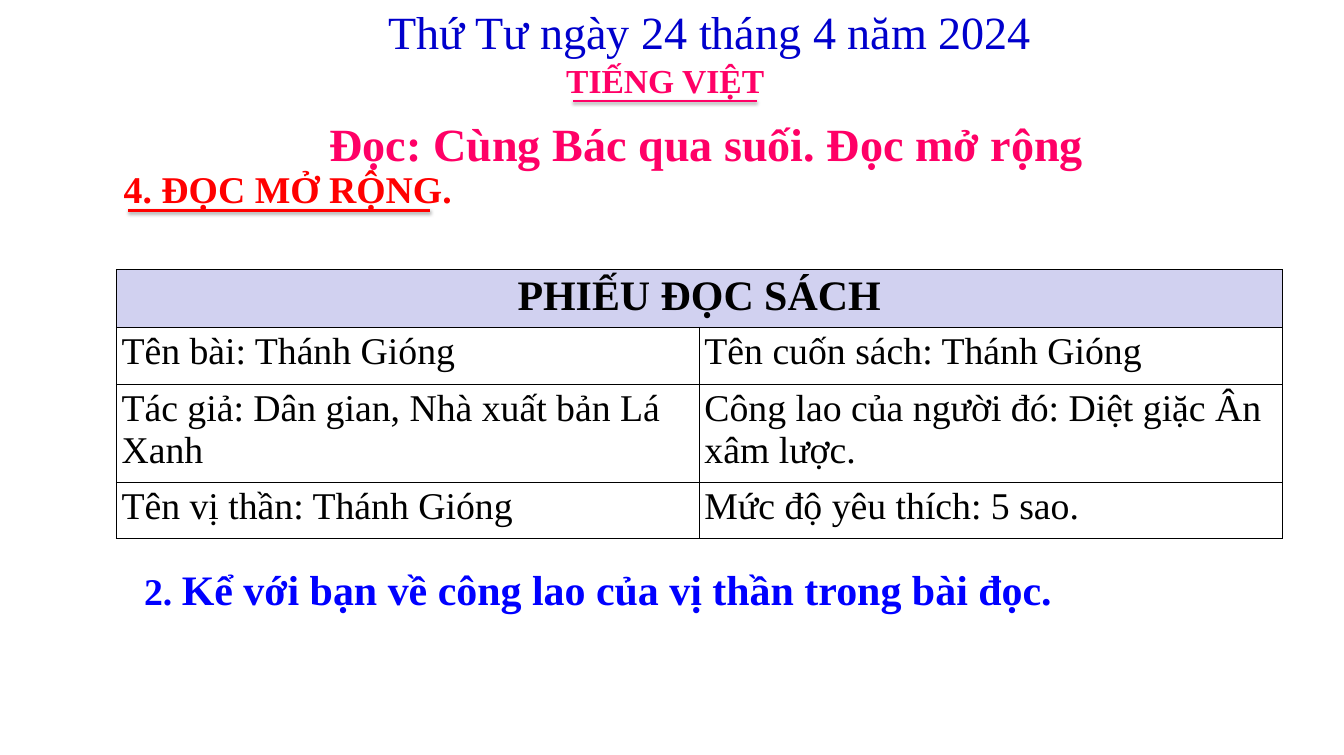
from lxml import etree
from pptx import Presentation
from pptx.dml.color import RGBColor
from pptx.enum.shapes import MSO_CONNECTOR
from pptx.enum.text import MSO_ANCHOR, MSO_AUTO_SIZE, PP_ALIGN
from pptx.oxml.ns import qn
from pptx.util import Pt

LINE = MSO_CONNECTOR.STRAIGHT
LEFT, CENTER, JUSTIFY = PP_ALIGN.LEFT, PP_ALIGN.CENTER, PP_ALIGN.JUSTIFY
TOP, FIT_SHAPE = MSO_ANCHOR.TOP, MSO_AUTO_SIZE.SHAPE_TO_FIT_TEXT

PX = 9144  # 100 px to the inch
SLIDE = (1780, 1000)
THEME = {
    "font": "Times New Roman",
    "date": "0000CC", "pink": "FF0066", "red": "FF0000", "blue": "0000FF",
    "ink": "000000", "header_fill": "D1D1F0",
    "heading": 44, "large": 40, "body": 36, "subject": 32,
}

# Content: runs are (text, size, colour, bold)
DATE = [("Thứ Tư ngày 24 tháng 4 năm 2024", "heading", "date", False)]
SUBJECT = [("TIẾNG VIỆT", "subject", "pink", True)]
LESSON = [("Đọc: Cùng Bác qua suối. Đọc mở rộng", "heading", "pink", True)]
SECTION = [("4. ĐỌC MỞ RỘNG.", "body", "red", True)]
TASK = [("2. ", "body", "blue", True),
        ("Kể với bạn về công lao của vị thần trong bài đọc.", "large", "blue", True)]
CARD_TITLE = [("PHIẾU ĐỌC SÁCH", "large", "ink", True)]
CARD_ROWS = [
    ("Tên bài: Thánh Gióng", "Tên cuốn sách: Thánh Gióng"),
    ("Tác giả: Dân gian, Nhà xuất bản Lá Xanh",
     "Công lao của người đó: Diệt giặc Ân xâm lược."),
    ("Tên vị thần: Thánh Gióng", "Mức độ yêu thích: 5 sao."),
]
CARD_BOX = (154, 357, 1544, 356)
ROW_HEIGHTS = (76, 75, 130, 75)


def px(*values):
    return [v * PX for v in values]


def color(key):
    return RGBColor.from_string(THEME[key])


def write(tf, runs, align=LEFT):
    p = tf.paragraphs[0]
    p.alignment = align
    for text, size, ink, bold in runs:
        r = p.add_run()
        r.text = text
        r.font.name = THEME["font"]
        r.font.size = Pt(THEME[size])
        r.font.bold = bold
        r.font.color.rgb = color(ink)


def add_text(shapes, box, runs, align=LEFT, wrap=True):
    tf = shapes.add_textbox(*px(*box)).text_frame
    tf.word_wrap = wrap
    tf.auto_size = FIT_SHAPE
    write(tf, runs, align)


def add_underline(shapes, x1, x2, y, ink, width, alpha, distance):
    line = shapes.add_connector(LINE, *px(x1, y, x2, y))
    line.line.color.rgb = color(ink)
    line.line.width = Pt(width)
    effects = etree.SubElement(line._element.spPr, qn("a:effectLst"))
    shadow = etree.SubElement(effects, qn("a:outerShdw"), blurRad=str(Pt(3.1)),
                              dist=str(Pt(distance)), dir="5400000", rotWithShape="0")
    ink_el = etree.SubElement(shadow, qn("a:srgbClr"), val=THEME["ink"])
    etree.SubElement(ink_el, qn("a:alpha"), val=str(alpha * 1000))


def add_borders(cell):
    tcPr = cell._tc.get_or_add_tcPr()
    for side in ("lnL", "lnR", "lnT", "lnB"):
        ln = etree.SubElement(tcPr, qn(f"a:{side}"), w=str(Pt(1)))
        fill = etree.SubElement(ln, qn("a:solidFill"))
        etree.SubElement(fill, qn("a:srgbClr"), val=THEME["ink"])


prs = Presentation()
prs.slide_width, prs.slide_height = px(*SLIDE)
s = prs.slides.add_slide(prs.slide_layouts[5])

# Date and subject
head = s.shapes.add_group_shape().shapes
add_text(head, (505, -1, 875, 84), DATE, wrap=False)
add_text(head, (740, 75, 285, 64), SUBJECT, wrap=False)
add_underline(head, 759, 1003, 134, "pink", 2, 38, 1.6)

# Lesson title
title = s.shapes.title
title.left, title.top, title.width, title.height = px(340, 145, 1192, 90)
tf = title.text_frame
tf.word_wrap = True
tf.auto_size = FIT_SHAPE
tf.vertical_anchor = TOP
tf.margin_left, tf.margin_right, tf.margin_top, tf.margin_bottom = px(16, 16, 8, 8)
write(tf, LESSON, CENTER)

# Section heading
section = s.shapes.add_group_shape().shapes
add_text(section, (154, 214, 742, 71), SECTION)
add_underline(section, 170, 570, 279, "red", 3, 35, 1.8)

# Task
add_text(s.shapes, (181, 742, 1517, 77), TASK, JUSTIFY)

# Reading card
table = s.shapes.add_table(len(ROW_HEIGHTS), 2, *px(*CARD_BOX)).table
table.first_row = table.horz_banding = False
for row, height in zip(table.rows, ROW_HEIGHTS):
    row.height = height * PX
for cell in table.iter_cells():
    add_borders(cell)
    cell.fill.background()

header = table.cell(0, 0)
header.merge(table.cell(0, 1))
header.fill.solid()
header.fill.fore_color.rgb = color("header_fill")
write(header.text_frame, CARD_TITLE, CENTER)

for i, texts in enumerate(CARD_ROWS, start=1):
    for j, text in enumerate(texts):
        cell = table.cell(i, j)
        cell.margin_left, cell.margin_right = px(7, 7)
        write(cell.text_frame, [(text, "body", "ink", False)])

prs.save("out.pptx")
